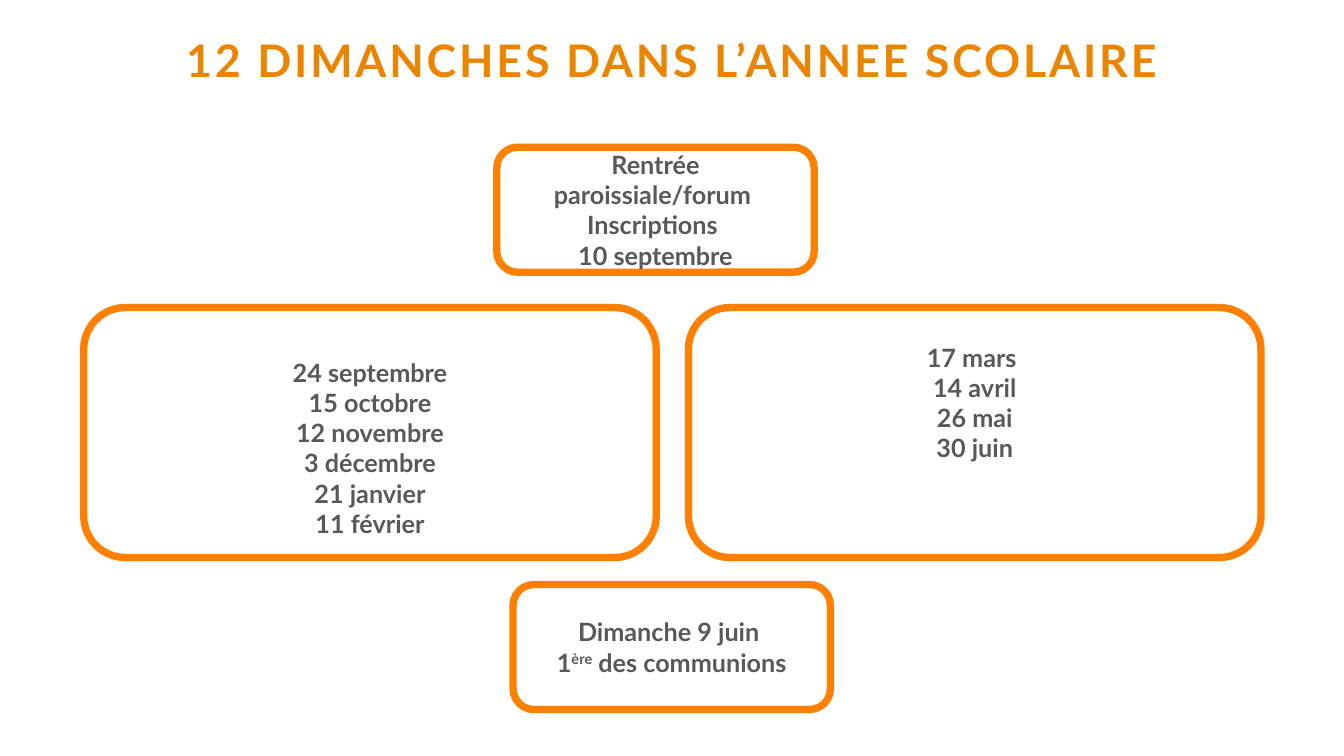
from dataclasses import dataclass

from pptx import Presentation
from pptx.dml.color import RGBColor
from pptx.enum import shapes, text
from pptx.util import Cm, Pt


@dataclass(frozen=True)
class Theme:
    font: str = "Lato"
    heading: RGBColor = RGBColor(0xEB, 0x85, 0x00)
    border: RGBColor = RGBColor(0xFF, 0x80, 0x00)
    body: RGBColor = RGBColor(0x59, 0x59, 0x59)
    heading_size: int = 32
    body_size: int = 18
    border_width: float = 5.25


THEME = Theme()
MARGIN = 0.13
LINE_HEIGHT = 0.76
SMALL_SIZE = (8, 3.15)
LARGE_SIZE = (14.43, 6.3)
LARGE_LEFT, LARGE_TOP, LARGE_PITCH = 2.11, 7.75, 15.24

FORUM = ["Rentrée paroissiale/forum ", "Inscriptions ", "10 septembre"]
AUTUMN = ["24 septembre", "15 octobre", "12 novembre",
          "3 décembre", "21 janvier", "11 février"]
SPRING = ["17 mars ", "14 avril", "26 mai", "30 juin"]
COMMUNION = ["Dimanche 9 juin "]


def add_text(paragraph, words, size=THEME.body_size, color=THEME.body,
             spacing=None, baseline=None):
    run = paragraph.add_run()
    run.text = words
    run.font.name = THEME.font
    run.font.size = Pt(size)
    run.font.bold = True
    run.font.color.rgb = color
    properties = run._r.get_or_add_rPr()
    if spacing is not None:
        properties.set("spc", str(spacing * 100))
    if baseline is not None:
        properties.set("baseline", str(baseline * 1000))
    paragraph.alignment = text.PP_ALIGN.CENTER


def add_heading(slide, words, width):
    heading = slide.shapes.title
    heading.left, heading.top = Cm(0), Cm(0.99)
    heading.width, heading.height = width, Cm(1.32)
    frame = heading.text_frame
    frame.word_wrap = True
    frame.auto_size = text.MSO_AUTO_SIZE.SHAPE_TO_FIT_TEXT
    frame.vertical_anchor = text.MSO_ANCHOR.TOP
    paragraph = frame.paragraphs[0]
    paragraph.line_spacing = Pt(30)
    add_text(paragraph, words, size=THEME.heading_size,
             color=THEME.heading, spacing=2)


def add_date_box(slide, left, top, size, lines, lines_above=0, lines_below=0):
    box = slide.shapes.add_shape(shapes.MSO_SHAPE.ROUNDED_RECTANGLE,
                                 Cm(left), Cm(top), *map(Cm, size))
    box.shadow.inherit = False
    box.fill.background()
    box.line.color.rgb = THEME.border
    box.line.width = Pt(THEME.border_width)
    frame = box.text_frame
    frame.word_wrap = True
    frame.vertical_anchor = text.MSO_ANCHOR.MIDDLE
    frame.margin_top = Cm(MARGIN + lines_above * LINE_HEIGHT)
    frame.margin_bottom = Cm(MARGIN + lines_below * LINE_HEIGHT)
    for index, line in enumerate(lines):
        paragraph = frame.add_paragraph() if index else frame.paragraphs[0]
        add_text(paragraph, line)
    return frame


def main():
    deck = Presentation()
    deck.slide_width, deck.slide_height = Cm(33.87), Cm(19.05)
    slide = deck.slides.add_slide(deck.slide_layouts[5])
    add_heading(slide, "12 DIMANCHES DANS L’ANNEE SCOLAIRE", deck.slide_width)

    add_date_box(slide, 12.52, 3.71, SMALL_SIZE, FORUM)
    add_date_box(slide, LARGE_LEFT, LARGE_TOP, LARGE_SIZE, AUTUMN, lines_above=1)
    add_date_box(slide, LARGE_LEFT + LARGE_PITCH, LARGE_TOP, LARGE_SIZE, SPRING,
                 lines_below=2)
    communion = add_date_box(slide, 12.93, 14.73, SMALL_SIZE, COMMUNION)
    first_communion = communion.add_paragraph()
    add_text(first_communion, "1")
    add_text(first_communion, "ère", baseline=30)
    add_text(first_communion, " des communions")

    deck.save("out.pptx")


if __name__ == "__main__":
    main()
